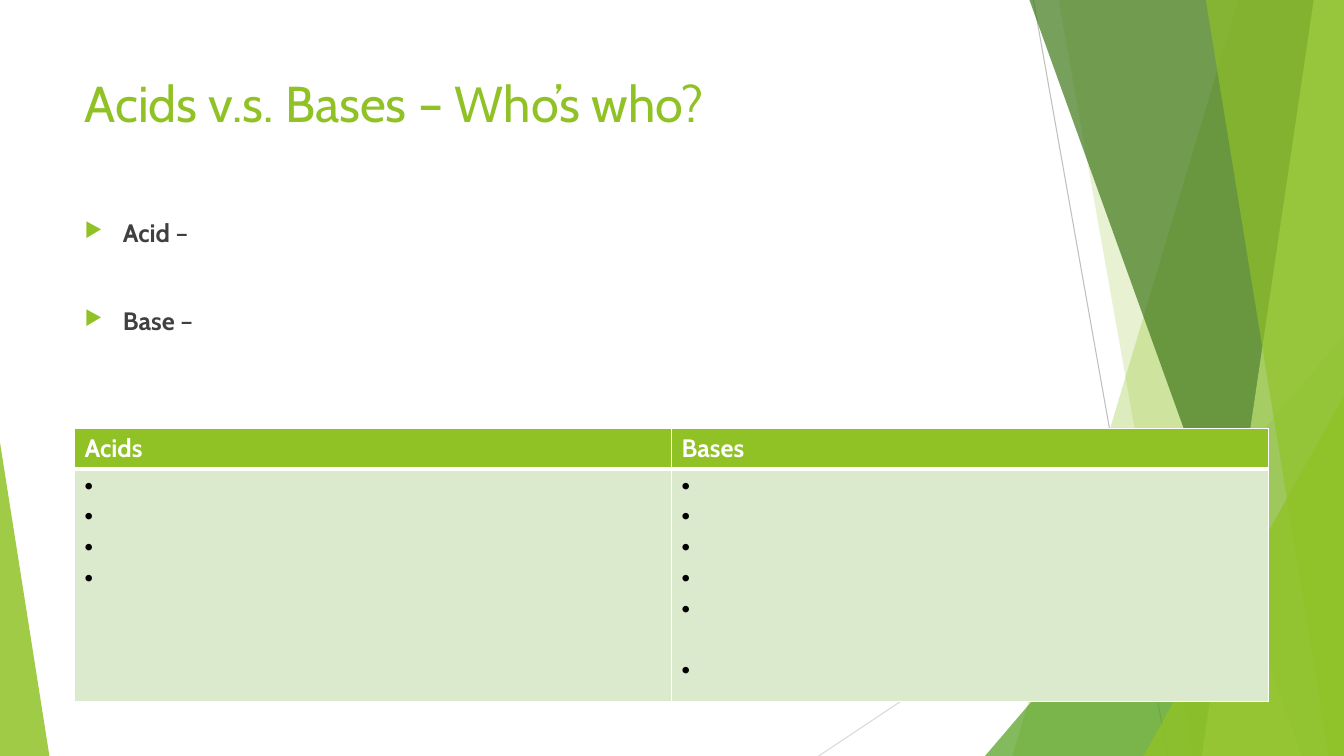
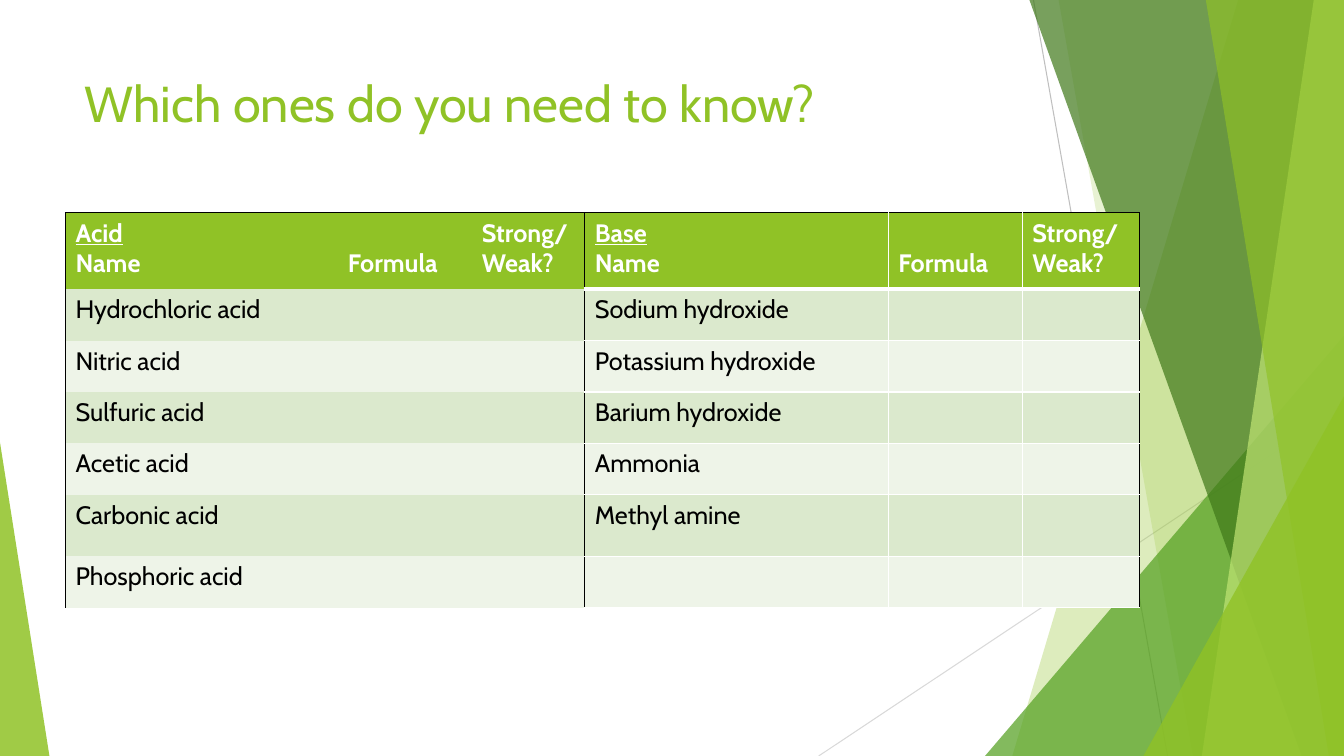
from collections import namedtuple
from dataclasses import dataclass

from lxml import etree
from pptx import Presentation
from pptx import util as u
from pptx.dml.color import RGBColor
from pptx.enum import shapes, text
from pptx.oxml.ns import qn

PX = 9144  # EMU per px, 100 px to the inch
Box = namedtuple("Box", "x y w h")


@dataclass(frozen=True)
class Theme:
    font: str = "Cabin"
    title_size: int = 36
    body_size: int = 18
    lime: str = "90C226"
    green: str = "54A021"
    forest: str = "3F7819"
    pale_lime: str = "C0E474"
    body: str = "404040"
    black: str = "000000"
    white: str = "FFFFFF"
    dark_row: str = "DBE9CD"
    light_row: str = "EEF4E8"
    steep_line: str = "BFBFBF"
    flat_line: str = "D9D9D9"


THEME = Theme()
SLIDE = Box(0, 0, 1333, 750)
TITLE = Box(74, 67, 940, 144)
LINE_PT = 22  # height of one line of body text

ACIDS = ["Hydrochloric acid", "Nitric acid", "Sulfuric acid", "Acetic acid",
         "Carbonic acid", "Phosphoric acid"]
BASES = ["Sodium hydroxide", "Potassium hydroxide", "Barium hydroxide",
         "Ammonia", "Methyl amine", ""]


def emu(*lengths):
    return [u.Emu(length * PX) for length in lengths]


def rgb(color):
    return RGBColor.from_string(color)


def add_child(parent, tag, **attributes):
    return etree.SubElement(parent, qn(tag), attributes)


def write(frame, words, size=THEME.body_size, color=THEME.black, bold=False,
          underline=False, paragraph=None):
    """Add a run to the given paragraph, or else to the next free one."""
    if paragraph is None:
        first = frame.paragraphs[0]
        paragraph = frame.add_paragraph() if first.runs else first
    run = paragraph.add_run()
    run.text = words
    font = run.font
    font.name, font.size, font.bold = THEME.font, u.Pt(size), bold
    font.underline = underline
    font.color.rgb = rgb(color)
    return paragraph


def set_bullet(paragraph, mark, indent, color, percent=100):
    props = paragraph._p.get_or_add_pPr()
    props.set("marL", str(indent * PX))
    props.set("indent", str(-indent * PX))
    add_child(add_child(props, "a:buClr"), "a:srgbClr", val=color)
    add_child(props, "a:buSzPct", val=str(percent * 1000))
    add_child(props, "a:buChar", char=mark)


# Facets shared by all slides

def tint(shape, color, opacity):
    shape.shadow.inherit = False
    shape.line.fill.background()
    shape.fill.solid()
    shape.fill.fore_color.rgb = rgb(color)
    add_child(shape.element.find(".//" + qn("a:srgbClr")), "a:alpha",
              val=str(opacity * 1000))


def add_facets(group, box):
    """Draw the overlapping green facets, from back to front."""
    def hairline(x1, y1, x2, y2, color):
        line = group.shapes.add_connector(
            shapes.MSO_CONNECTOR.STRAIGHT,
            *emu(box.x + x1, box.y + y1, box.x + x2, box.y + y2))
        line.line.color.rgb = rgb(color)
        line.line.width = u.Pt(0.75)
        add_child(line.element.spPr, "a:effectLst")

    def blade(top_x, bottom_x, color, opacity):
        """Fill from a slanted edge to the right side of the box."""
        corners = [(box.x + x, box.y + y) for x, y in
                   ((top_x, 0), (box.w, 0), (box.w, box.h), (bottom_x, box.h))]
        outline = group.shapes.build_freeform(*corners[0], scale=PX)
        outline.add_line_segments(corners[1:], close=True)
        tint(outline.convert_to_shape(), color, opacity)

    def wedge(x, y, width, apex, color, opacity):
        triangle = group.shapes.add_shape(
            shapes.MSO_SHAPE.ISOSCELES_TRIANGLE,
            *emu(box.x + x, box.y + y, width, box.h - y))
        triangle.adjustments[0] = apex
        tint(triangle, color, opacity)

    hairline(1025, 0, 1158, box.h, THEME.steep_line)
    hairline(box.w, 403, 812, box.h, THEME.flat_line)
    blade(1228, 1004, THEME.lime, 30)
    blade(1050, 1183, THEME.lime, 20)
    wedge(977, 333, 356, 1, THEME.green, 72)
    blade(1021, 1291, THEME.forest, 70)
    blade(1303, 1192, THEME.pale_lime, 70)
    blade(1196, 1318, THEME.lime, 65)
    wedge(1134, 393, 199, 1, THEME.lime, 80)
    wedge(0, 439, 49, 0, THEME.lime, 85)


def move_facets_to_layout(slide, layout):
    """Build the facets as a group and place it behind the layout's title."""
    for placeholder in list(layout.placeholders):
        if placeholder.placeholder_format.idx:
            placeholder.element.getparent().remove(placeholder.element)
    group = slide.shapes.add_group_shape()
    add_facets(group, SLIDE)
    layout.shapes.element.insert(2, group.element)


def add_titled_slide(prs, layout, words):
    slide = prs.slides.add_slide(layout)
    title = slide.shapes.title
    title.left, title.top, title.width, title.height = emu(*TITLE)
    frame = title.text_frame
    frame.word_wrap = True
    frame.auto_size = text.MSO_AUTO_SIZE.NONE
    frame.vertical_anchor = text.MSO_ANCHOR.TOP
    heading = write(frame, words, size=THEME.title_size, color=THEME.lime)
    heading.alignment = text.PP_ALIGN.LEFT
    return slide


# Tables

def add_grid(slide, box, widths, heights):
    table = slide.shapes.add_table(len(heights), len(widths), *emu(*box)).table
    table.horz_banding = False
    for column, width in zip(table.columns, emu(*widths)):
        column.width = width
    for row, height in zip(table.rows, emu(*heights)):
        row.height = height
    return table


def style_cell(cell, fill, **edges):
    """Fill a cell; each edge L, R, T, B is (colour, points) or left bare."""
    cell.fill.solid()
    cell.fill.fore_color.rgb = rgb(fill)
    props = cell._tc.get_or_add_tcPr()
    for position, side in enumerate("LRTB"):
        color, points = edges.get(side, (None, 0))
        edge = etree.Element(qn("a:ln" + side), w=str(u.Pt(points)))
        if color:
            add_child(add_child(edge, "a:solidFill"), "a:srgbClr", val=color)
        else:
            add_child(edge, "a:noFill")
        props.insert(position, edge)


def add_definitions(slide, box):
    frame = slide.shapes.add_textbox(*emu(*box)).text_frame
    frame.word_wrap = True
    for term, gap in (("Acid", 0), ("Base", LINE_PT + 19)):
        entry = write(frame, term, color=THEME.body, bold=True)
        write(frame, " –", color=THEME.body, paragraph=entry)
        entry.space_before = u.Pt(gap)
        set_bullet(entry, "▶", 38, THEME.lime, 80)


def add_comparison(slide, box):
    """Two headed columns of open bullets to fill in."""
    header_height = 40
    table = add_grid(slide, box, [box.w // 2] * 2,
                     [header_height, box.h - header_height])
    thin, thick = (THEME.white, 1), (THEME.white, 3)
    for column, (heading, gaps) in enumerate((
            ("Acids", [0] * 4), ("Bases", [0] * 5 + [LINE_PT]))):
        header, answers = (table.cell(row, column) for row in range(2))
        write(header.text_frame, heading, color=THEME.white, bold=True)
        style_cell(header, THEME.lime, L=thin, R=thin, T=thin, B=thick)
        for gap in gaps:
            answer = write(answers.text_frame, " ")
            answer.space_before = u.Pt(gap)
            set_bullet(answer, "•", 31, THEME.black)
        style_cell(answers, THEME.dark_row, L=thin, R=thin, T=thick, B=thin)


def write_header(cells, family):
    name, formula, strength = cells
    label = dict(color=THEME.white, bold=True)
    write(name.text_frame, family, underline=True, **label)
    write(name.text_frame, "Name", **label)
    write(formula.text_frame, "Formula", **label)
    formula.vertical_anchor = text.MSO_ANCHOR.BOTTOM
    formula.margin_bottom = u.Emu(10 * PX)
    write(strength.text_frame, "Strong/Weak?", **label)


def cell_edges(row, part, ruled):
    """Black frame round each family; white rules inside a ruled one."""
    black, thin, thick = (THEME.black, 1), (THEME.white, 1), (THEME.white, 3)
    edges = {}
    if ruled:
        edges = dict(L=thin, R=thin, T=thick if row == 1 else thin,
                     B=thick if row == 0 else thin)
    if row == 0:
        edges["T"] = black
    if part == 0:
        edges["L"] = black
    if part == 2:
        edges["R"] = black
    return edges


def add_compounds(slide, box):
    """Acids and bases side by side, three columns each."""
    table = add_grid(slide, box, [270, 133, 112, 301, 133, 116],
                     [76, 51, 51, 51, 51, 61, 51])
    for start, family, names in ((0, "Acid", ACIDS), (3, "Base", BASES)):
        write_header([table.cell(0, start + part) for part in range(3)], family)
        for row, name in enumerate(names, 1):
            if name:
                write(table.cell(row, start).text_frame, name)
        for row in range(len(names) + 1):
            band = THEME.dark_row if row % 2 else THEME.light_row
            for part in range(3):
                style_cell(table.cell(row, start + part),
                           band if row else THEME.lime,
                           **cell_edges(row, part, family == "Base"))


def main():
    prs = Presentation()
    prs.slide_width, prs.slide_height = emu(SLIDE.w, SLIDE.h)
    layout = prs.slide_layouts[5]

    who = add_titled_slide(prs, layout, "Acids v.s. Bases – Who’s who?")
    move_facets_to_layout(who, layout)
    add_definitions(who, Box(74, 211, 940, 200))
    add_comparison(who, Box(74, 425, 1184, 271))

    which = add_titled_slide(prs, layout, "Which ones do you need to know?")
    add_compounds(which, Box(65, 211, 1065, 392))

    prs.save("out.pptx")


if __name__ == "__main__":
    main()
